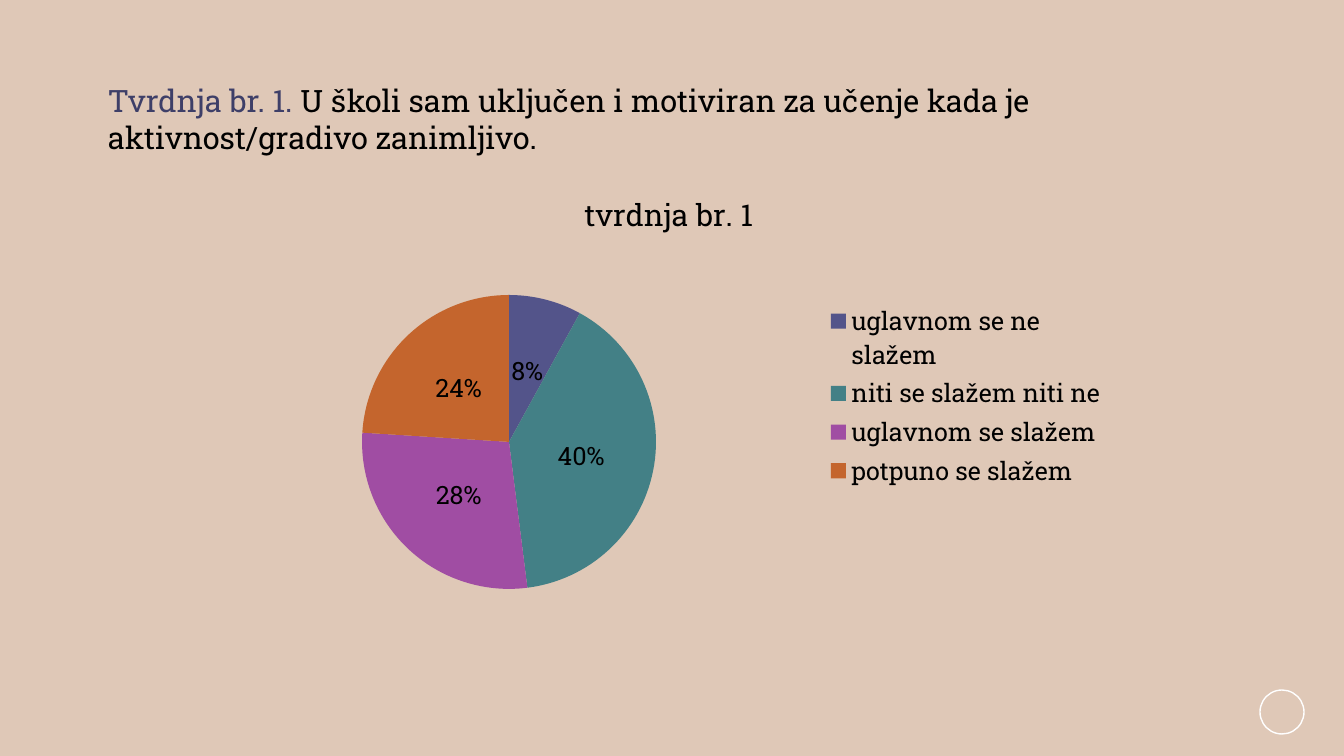
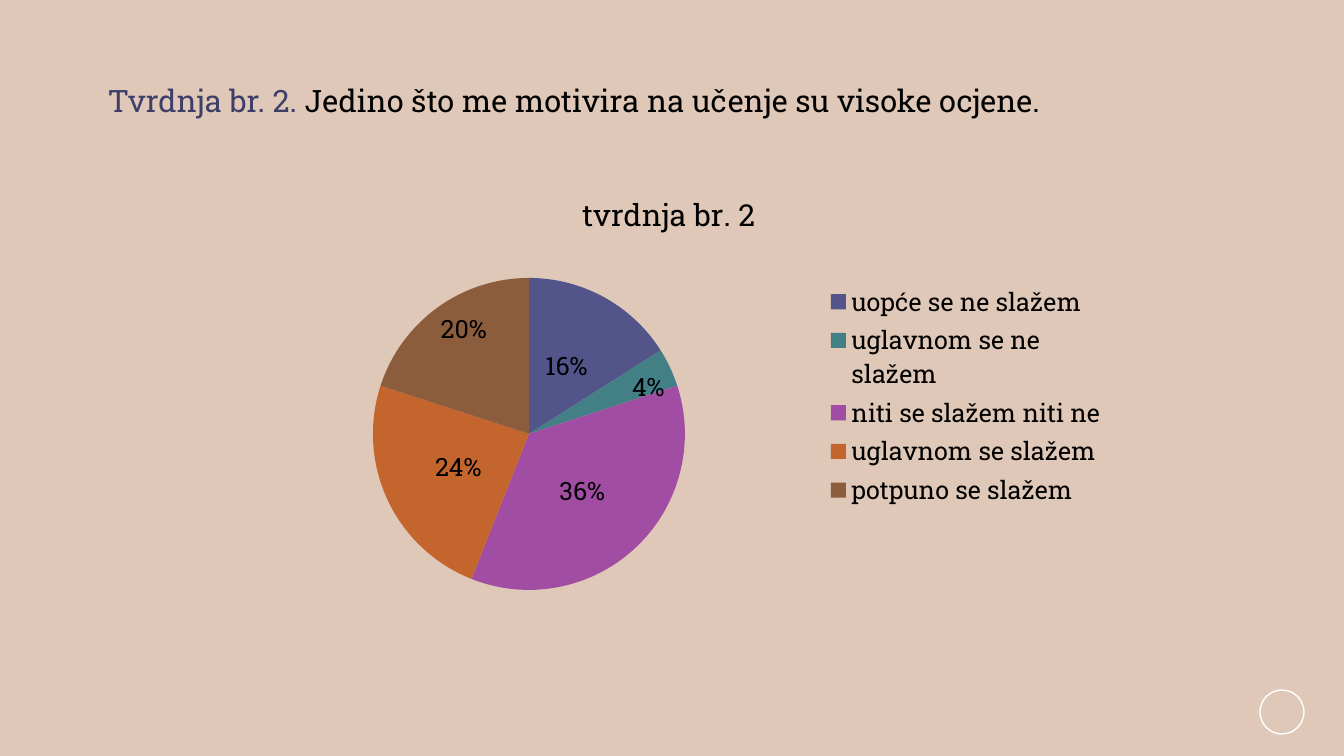
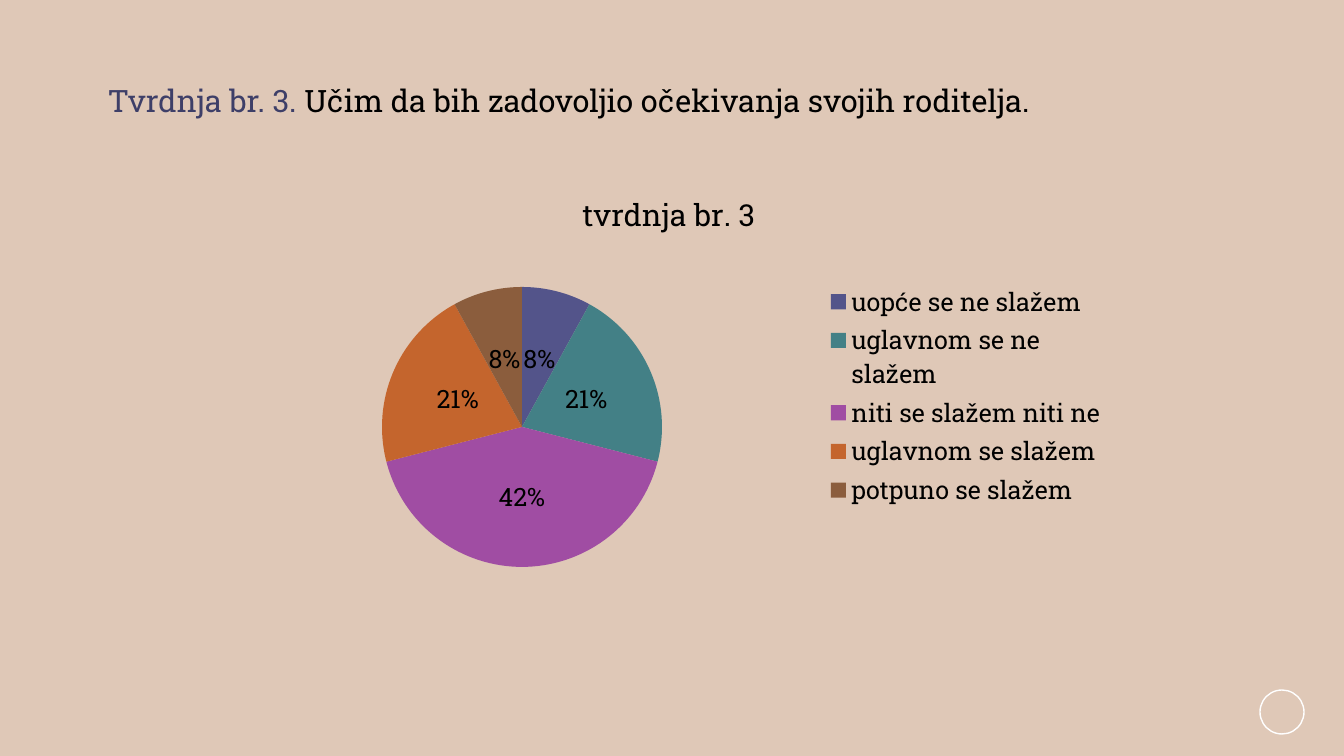
from pptx import Presentation
from pptx.chart.data import CategoryChartData
from pptx.dml.color import RGBColor
from pptx.enum.chart import XL_CHART_TYPE, XL_LABEL_POSITION, XL_LEGEND_POSITION
from pptx.enum.shapes import MSO_SHAPE
from pptx.enum.text import MSO_AUTO_SIZE
from pptx.oxml import parse_xml
from pptx.oxml.ns import nsdecls
from pptx.util import Pt

FONT = "Roboto Slab"
SAND = RGBColor(0xDF, 0xC8, 0xB7)
NAVY = RGBColor(0x3E, 0x3F, 0x68)
BLACK = RGBColor(0, 0, 0)
WHITE = RGBColor(255, 255, 255)
SLICE_COLOURS = [RGBColor.from_string(code) for code in
                 ("53548A", "438086", "A04DA3", "C4652D", "8B5D3D")]

ANSWERS = ["uopće se ne slažem", "uglavnom se ne slažem", "niti se slažem niti ne",
           "uglavnom se slažem", "potpuno se slažem"]

CLAIMS = [
    {"text": "U školi sam uključen i motiviran za učenje kada je aktivnost/gradivo zanimljivo.",
     "answers": ANSWERS[1:], "shares": [8, 40, 28, 24], "at_edge": [],
     "series": "tvrdnja br. 1", "centre": (509, 442), "radius": 147, "lines": 2},
    {"text": "Jedino što me motivira na učenje su visoke ocjene.",
     "answers": ANSWERS, "shares": [16, 4, 36, 24, 20], "at_edge": [1, 4],
     "series": "Series 1", "centre": (529, 434), "radius": 156, "lines": 1},
    {"text": "Učim da bih zadovoljio očekivanja svojih roditelja.",
     "answers": ANSWERS, "shares": [8, 21, 42, 21, 8], "at_edge": [],
     "series": "Series 1", "centre": (522, 427), "radius": 140, "lines": 1},
]

CHART_BOX = (221, 172, 896, 448)
HEADING_LEFT, HEADING_TOP, HEADING_WIDTH = 98, 77, 1103
LINE_HEIGHT, HEADING_PADDING = 37, 10
RING_BOX = (1260, 690, 44, 44)


def px(length):
    return round(length * 914400 / 100.8)


def box(*lengths):
    return [px(length) for length in lengths]


def style(font, size, colour):
    font.name = FONT
    font.size = Pt(size)
    font.bold = False
    font.color.rgb = colour


def add_ring(slide):
    ring = slide.shapes.add_shape(MSO_SHAPE.OVAL, *box(*RING_BOX))
    ring.shadow.inherit = False
    ring.fill.background()
    ring.line.color.rgb = WHITE
    ring.line.width = Pt(1)


def add_heading(slide, number, claim):
    height = claim["lines"] * LINE_HEIGHT + HEADING_PADDING
    heading = slide.shapes.add_textbox(
        *box(HEADING_LEFT, HEADING_TOP, HEADING_WIDTH, height)).text_frame
    heading.word_wrap = True
    heading.auto_size = MSO_AUTO_SIZE.SHAPE_TO_FIT_TEXT
    for text, colour in ((f"Tvrdnja br. {number}. ", NAVY), (claim["text"], BLACK)):
        run = heading.paragraphs[0].add_run()
        run.text = text
        style(run.font, 22, colour)


def place_pie(chart, centre, radius):
    left, top, width, height = CHART_BOX
    fractions = {"x": (centre[0] - radius - left) / width,
                 "y": (centre[1] - radius - top) / height,
                 "w": 2 * radius / width,
                 "h": 2 * radius / height}
    sides = "".join(f'<c:{side} val="{value:.4f}"/>' for side, value in fractions.items())
    plot_area = chart.plots[0]._element.getparent()
    for layout in plot_area.findall("{*}layout"):
        plot_area.remove(layout)
    plot_area.insert(0, parse_xml(
        f'<c:layout {nsdecls("c")}><c:manualLayout><c:layoutTarget val="inner"/>'
        f'<c:xMode val="edge"/><c:yMode val="edge"/>{sides}</c:manualLayout></c:layout>'))


def add_pie(slide, number, claim):
    answers = CategoryChartData()
    answers.categories = claim["answers"]
    answers.add_series(claim["series"], claim["shares"])
    chart = slide.shapes.add_chart(XL_CHART_TYPE.PIE, *box(*CHART_BOX), answers).chart
    style(chart.font, 18, BLACK)

    chart.has_title = True
    title = chart.chart_title.text_frame.paragraphs[0].add_run()
    title.text = f"tvrdnja br. {number}"
    style(title.font, 21.6, BLACK)

    chart.has_legend = True
    chart.legend.position = XL_LEGEND_POSITION.RIGHT
    chart.legend.include_in_layout = False
    style(chart.legend.font, 18, BLACK)

    pie = chart.plots[0]
    pie.vary_by_categories = True
    slices = pie.series[0]
    for index, colour in enumerate(SLICE_COLOURS[:len(claim["shares"])]):
        slices.points[index].format.fill.solid()
        slices.points[index].format.fill.fore_color.rgb = colour

    labels = slices.data_labels
    labels.show_value = False
    labels.show_percentage = True
    labels.number_format = "0%"
    labels.number_format_is_linked = False
    labels.position = XL_LABEL_POSITION.CENTER
    style(labels.font, 18, BLACK)
    for index in claim["at_edge"]:
        label = slices.points[index].data_label
        style(label.font, 18, BLACK)
        label.position = XL_LABEL_POSITION.INSIDE_END
        shown = label._dLbl
        shown.find("{*}showVal").set("val", "0")
        shown.find("{*}showPercent").set("val", "1")
    place_pie(chart, claim["centre"], claim["radius"])


def main():
    deck = Presentation()
    deck.slide_width, deck.slide_height = box(1344, 756)
    deck.slide_master.background.fill.solid()
    deck.slide_master.background.fill.fore_color.rgb = SAND
    for number, claim in enumerate(CLAIMS, 1):
        slide = deck.slides.add_slide(deck.slide_layouts[6])
        add_ring(slide)
        add_pie(slide, number, claim)
        add_heading(slide, number, claim)
    deck.save("out.pptx")


if __name__ == "__main__":
    main()
